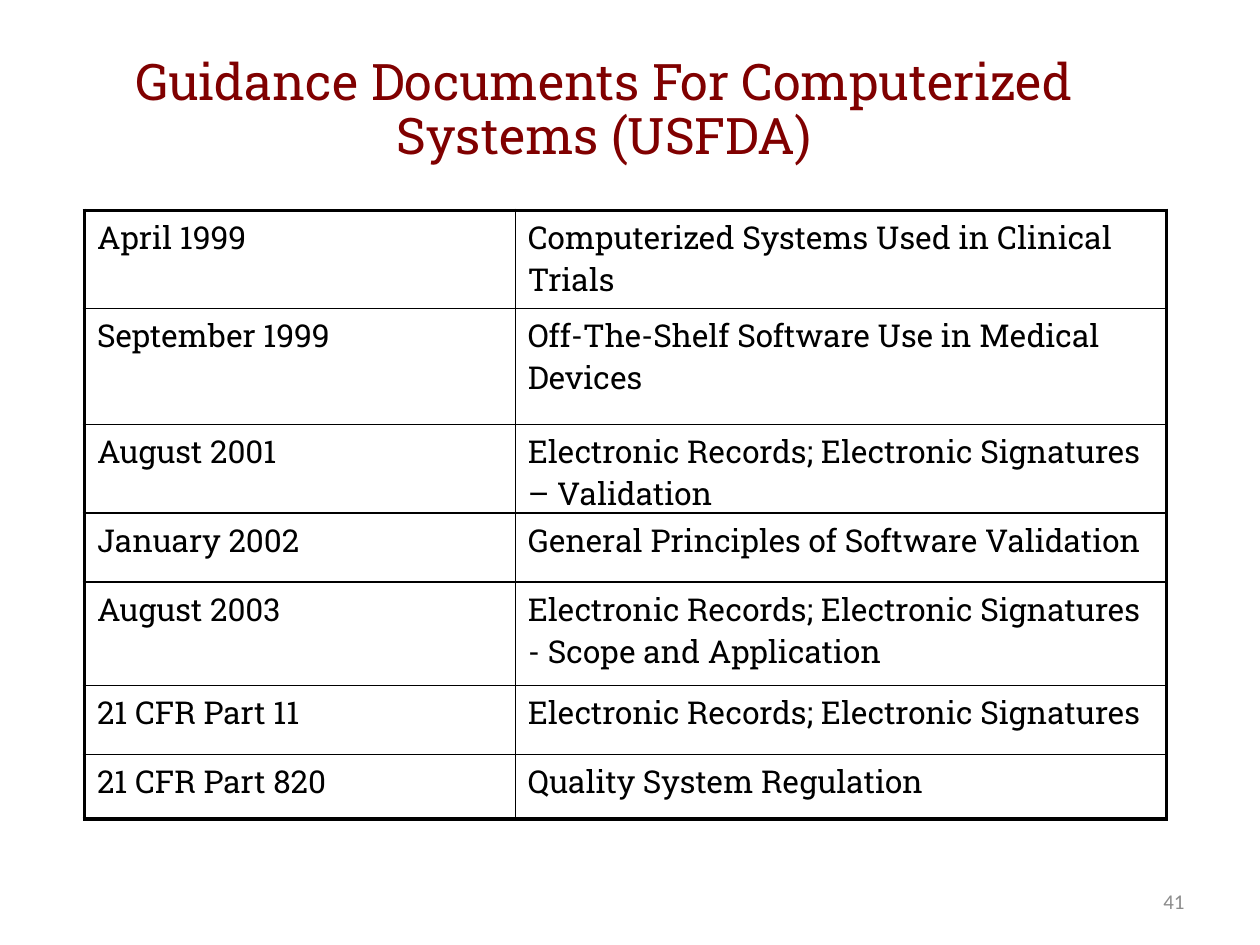
from typing import NamedTuple

from lxml import etree
from pptx import Presentation
from pptx.dml.color import RGBColor
from pptx.enum.text import MSO_ANCHOR, PP_ALIGN
from pptx.oxml.ns import qn
from pptx.util import Inches, Pt

MIDDLE = MSO_ANCHOR.MIDDLE
LEFT, CENTER, RIGHT = PP_ALIGN.LEFT, PP_ALIGN.CENTER, PP_ALIGN.RIGHT
COLORS = {"title": "800000", "ink": "000000", "number": "8C8C8C"}
SLAB, SANS = "Roboto Slab", "Calibri"
THIN, THICK = 1, 2.25
COLS = (3.42, 5.17)


class Style(NamedTuple):
    size: float
    font: str
    color: str
    align: PP_ALIGN
    spacing: float = 1


class Label(NamedTuple):
    text: str
    left: float
    top: float
    width: float
    height: float
    style: Style


class Entry(NamedTuple):
    date: str
    title: str
    height: float


BODY = Style(18, SLAB, "ink", LEFT)
LABELS = [
    Label("Guidance Documents For Computerized Systems (USFDA)",
          0.42, 0.42, 8.75, 0.92, Style(28.8, SLAB, "title", CENTER, 0.9)),
    Label("41", 7.17, 6.95, 2.33, 0.4, Style(12, SANS, "number", RIGHT)),
]
ENTRIES = [
    Entry("April 1999", "Computerized Systems Used in Clinical Trials", 0.78),
    Entry("September 1999", "Off-The-Shelf Software Use in Medical Devices", 0.92),
    Entry("August 2001", "Electronic Records; Electronic Signatures – Validation", 0.55),
    Entry("January 2002", "General Principles of Software Validation", 0.55),
    Entry("August 2003",
          "Electronic Records; Electronic Signatures - Scope and Application", 0.82),
    Entry("21 CFR Part 11", "Electronic Records; Electronic Signatures", 0.55),
    Entry("21 CFR Part 820", "Quality System Regulation", 0.51),
]


def write(frame, text: str, style: Style) -> None:
    para = frame.paragraphs[0]
    para.alignment = style.align
    para.line_spacing = style.spacing
    run = para.add_run()
    run.text = text
    run.font.size = Pt(style.size)
    run.font.name = style.font
    run.font.color.rgb = RGBColor.from_string(COLORS[style.color])


def add_label(slide, label: Label) -> None:
    box = slide.shapes.add_textbox(Inches(label.left), Inches(label.top),
                                   Inches(label.width), Inches(label.height))
    frame = box.text_frame
    frame.word_wrap = True
    frame.vertical_anchor = MIDDLE
    write(frame, label.text, label.style)


def set_border(cell, widths: dict[str, float]) -> None:
    """Put the side lines ahead of the fill, as the schema demands."""
    props = cell._tc.get_or_add_tcPr()
    for place, (side, width) in enumerate(widths.items()):
        line = etree.Element(qn(f"a:ln{side}"), w=str(Pt(width)))
        fill = etree.SubElement(line, qn("a:solidFill"))
        etree.SubElement(fill, qn("a:srgbClr"), val=COLORS["ink"])
        props.insert(place, line)


def add_grid(slide, entries: list[Entry]) -> None:
    count = len(entries)
    table = slide.shapes.add_table(
        count, len(COLS), Inches(0.67), Inches(1.67), Inches(sum(COLS)),
        Inches(sum(entry.height for entry in entries))).table
    table.first_row = table.horz_banding = False
    for col, width in zip(table.columns, COLS):
        col.width = Inches(width)
    for r, entry in enumerate(entries):
        table.rows[r].height = Inches(entry.height)
        for c, text in enumerate((entry.date, entry.title)):
            cell = table.cell(r, c)
            cell.fill.background()
            write(cell.text_frame, text, BODY)
            outer = {"L": c == 0, "R": c == len(COLS) - 1,
                     "T": r == 0, "B": r == count - 1}
            set_border(cell, {side: THICK if edge else THIN
                              for side, edge in outer.items()})


def main() -> None:
    deck = Presentation()
    deck.slide_width, deck.slide_height = Inches(10), Inches(7.5)
    slide = deck.slides.add_slide(deck.slide_layouts[6])
    title, number = LABELS
    add_label(slide, title)
    add_grid(slide, ENTRIES)
    add_label(slide, number)
    deck.save("out.pptx")


if __name__ == "__main__":
    main()
